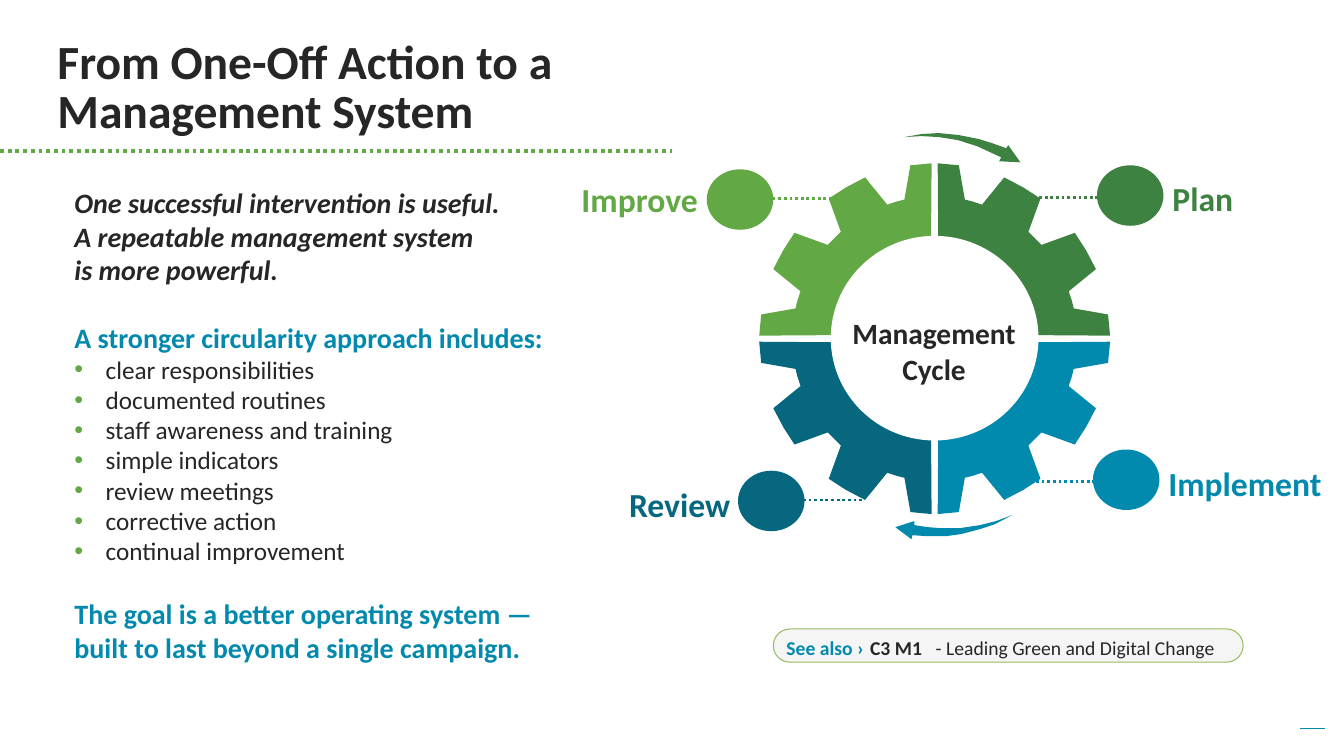
from lxml.etree import SubElement
from pptx import Presentation
from pptx.dml.color import RGBColor
from pptx.enum.dml import MSO_LINE
from pptx.enum.shapes import MSO_CONNECTOR, MSO_SHAPE
from pptx.enum.text import MSO_ANCHOR, MSO_AUTO_SIZE, PP_ALIGN
from pptx.oxml.ns import qn
from pptx.util import Inches, Pt

INK = RGBColor(0x26, 0x26, 0x26)
WHITE = RGBColor(0xFF, 0xFF, 0xFF)
PALE = RGBColor(0xF5, 0xF5, 0xF5)
OLIVE = RGBColor(0x97, 0xBC, 0x62)
LIME = RGBColor(0x62, 0xA8, 0x44)
GREEN = RGBColor(0x3D, 0x82, 0x41)
BLUE = RGBColor(0x02, 0x89, 0xAE)
TEAL = RGBColor(0x06, 0x67, 0x7F)
FONT = "Calibri"

TITLE = "From One-Off Action to a Management System"
LEAD = ["One successful intervention is useful.\vA repeatable management system",
        "is more powerful."]
HEAD = "A stronger circularity approach includes:"
ITEMS = ["clear responsibilities", "documented routines",
         "staff awareness and training", "simple indicators",
         "review meetings", "corrective action", "continual improvement"]
GOAL = ("The goal is a better operating system — "
        "built to last beyond a single campaign.")

STAGES = [
    ("Plan", GREEN, (11.53, 1.64, 0.92, 0.58), (10.88, 1.64), (10.25, 1.96)),
    ("Implement", BLUE, (11.49, 4.46, 1.84, 0.58), (10.84, 4.46), (10.22, 4.78)),
    ("Review", TEAL, (5.97, 4.67, 1.37, 0.58), (7.32, 4.67), (8.55, 4.96)),
    ("Improve", LIME, (5.46, 1.65, 1.56, 0.58), (7.01, 1.68), (8.25, 1.97)),
]
DOT = (0.66, 0.6)

HUB = (9.27, 3.36)
HALF = [(0.04, -0.32), (0.03, -1.74), (0.24, -1.72), (0.3, -1.38),
        (0.38, -1.36), (0.47, -1.33), (0.69, -1.6), (0.88, -1.5),
        (1.05, -1.39), (0.93, -1.06)]

ARROWS = [
    (GREEN, [(8.97, 1.36), (9.14, 1.33), (9.31, 1.32), (9.51, 1.34),
             (9.71, 1.38), (9.84, 1.42), (9.98, 1.47), (10, 1.44),
             (10.12, 1.61), (9.91, 1.6), (9.93, 1.56), (9.82, 1.51),
             (9.69, 1.45), (9.5, 1.39), (9.31, 1.36), (9.14, 1.35)]),
    (BLUE, [(10.04, 5.11), (9.87, 5.2), (9.72, 5.25), (9.53, 5.3),
            (9.38, 5.32), (9.2, 5.32), (9.05, 5.31), (9.04, 5.35),
            (8.88, 5.23), (9.07, 5.17), (9.07, 5.21), (9.2, 5.23),
            (9.33, 5.24), (9.52, 5.24), (9.72, 5.21), (9.88, 5.17)]),
]

NOTES = [
    ("See also ›", (7.8, 6.31, 0.83, 0.24), BLUE, True),
    ("C3 M1", (8.63, 6.31, 0.64, 0.24), INK, True),
    ("- Leading Green and Digital Change", (9.28, 6.31, 2.95, 0.24), INK, False),
]

deck = Presentation()
deck.slide_width, deck.slide_height = Inches(13.33), Inches(7.5)
slide = deck.slides.add_slide(deck.slide_layouts[5])
shapes = slide.shapes


def write(frame, text, first=True, size=20, color=INK, bold=True, slant=False,
          align=PP_ALIGN.LEFT, gap=0, lead=None, bullet=None):
    para = frame.paragraphs[0] if first else frame.add_paragraph()
    para.text = text
    para.alignment = align
    para.space_before = Pt(gap)
    if lead:
        para.line_spacing = lead
    if bullet:
        props = para._p.get_or_add_pPr()
        props.set("marL", str(Inches(0.31)))
        props.set("indent", str(-Inches(0.31)))
        tint = SubElement(props, qn("a:buClr"))
        SubElement(tint, qn("a:srgbClr")).set("val", str(bullet))
        SubElement(props, qn("a:buFont")).set("typeface", "Arial")
        SubElement(props, qn("a:buChar")).set("char", "•")
    for run in para.runs:
        font = run.font
        font.name, font.size, font.bold, font.italic = FONT, Pt(size), bold, slant
        font.color.rgb = color


def box(place, pad=None, anchor=MSO_ANCHOR.TOP):
    frame = shapes.add_textbox(*map(Inches, place)).text_frame
    frame.word_wrap = True
    frame.vertical_anchor = anchor
    if pad is not None:
        frame.margin_left = frame.margin_right = Inches(pad)
        frame.margin_top = frame.margin_bottom = Inches(pad)
    return frame


def paint(shape, color, edge=None):
    shape.shadow.inherit = False
    shape.fill.solid()
    shape.fill.fore_color.rgb = color
    if edge:
        shape.line.color.rgb = edge
        shape.line.width = Pt(0.75)
    else:
        shape.line.fill.background()


def trace(points, color):
    spots = [(Inches(x), Inches(y)) for x, y in points]
    pen = shapes.build_freeform(*spots[0], scale=1.0)
    pen.add_line_segments(spots[1:], close=True)
    paint(pen.convert_to_shape(), color)


def rule(start, end, color, width, dash=None):
    link = shapes.add_connector(MSO_CONNECTOR.STRAIGHT,
                                *map(Inches, (*start, *end)))
    link.line.color.rgb = color
    link.line.width = Pt(width)
    if dash:
        link.line.dash_style = dash
    SubElement(link._element.spPr, qn("a:effectLst"))


title = shapes.title
title.left, title.top, title.width, title.height = map(
    Inches, (0.47, 0.34, 5.26, 1.22))
title.text_frame.vertical_anchor = MSO_ANCHOR.TOP
title.text_frame.word_wrap = True
title.text_frame.auto_size = MSO_AUTO_SIZE.NONE
write(title.text_frame, TITLE, size=34, lead=Pt(35.2))
rule((12.89, 7.23), (13.14, 7.23), BLUE, 0.75)
rule((0, 1.5), (6.67, 1.5), LIME, 2.75, MSO_LINE.ROUND_DOT)

body = box((0.64, 1.79, 5.16, 5.18))
for i, line in enumerate(LEAD):
    write(body, line, first=i == 0, slant=True)
write(body, HEAD, first=False, color=BLUE, gap=24.4)
for item in ITEMS:
    write(body, item, first=False, size=18, bold=False, bullet=LIME)
write(body, GOAL, first=False, color=BLUE, gap=22)

pill = shapes.add_shape(MSO_SHAPE.ROUNDED_RECTANGLE,
                        *map(Inches, (7.67, 6.24, 4.66, 0.33)))
pill.adjustments[0] = 0.5
paint(pill, PALE, OLIVE)
for text, place, color, bold in NOTES:
    write(box(place, 0, MSO_ANCHOR.MIDDLE), text, size=14, color=color, bold=bold)

for color, points in ARROWS:
    trace(points, color)

part = HALF + [(-y, -x) for x, y in reversed(HALF)]
for stage in STAGES:
    trace([(HUB[0] + x, HUB[1] + y) for x, y in part], stage[1])
    part = [(-y, x) for x, y in part]

hole = shapes.add_shape(MSO_SHAPE.OVAL, *map(Inches, (8.24, 2.34, 2.06, 2.03)))
paint(hole, WHITE)
write(box((8.13, 3.08, 2.27, 0.78), 0.05), "Management\vCycle", size=21,
      align=PP_ALIGN.CENTER)

for name, color, place, spot, tip in STAGES:
    rule(tip, (spot[0] + DOT[0] / 2, tip[1]), color, 2, MSO_LINE.ROUND_DOT)
    paint(shapes.add_shape(MSO_SHAPE.OVAL, *map(Inches, spot + DOT)), color)
    side = PP_ALIGN.RIGHT if spot[0] < HUB[0] else PP_ALIGN.LEFT
    write(box(place), name, size=24, color=color, align=side, lead=1.2)

deck.save("out.pptx")
